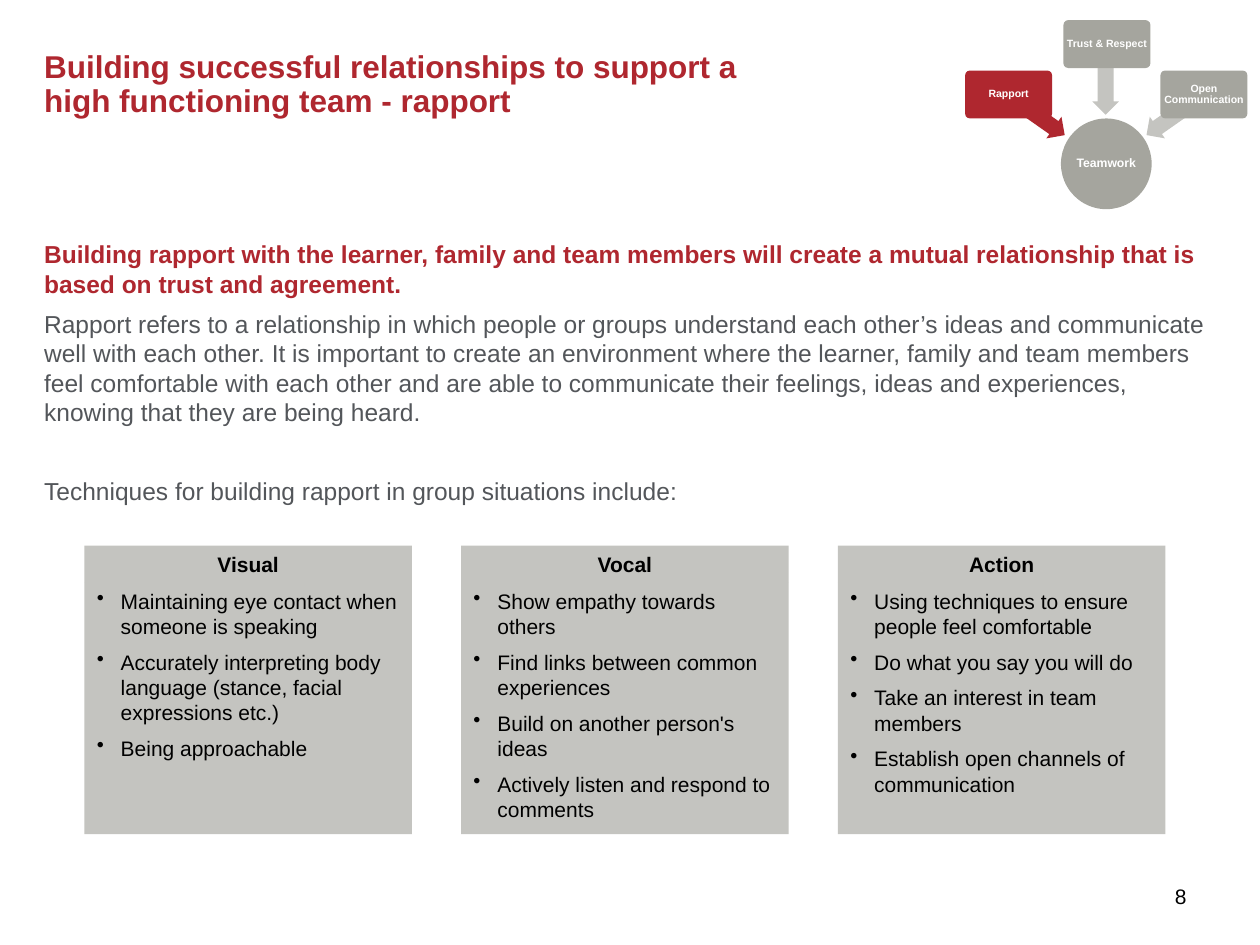
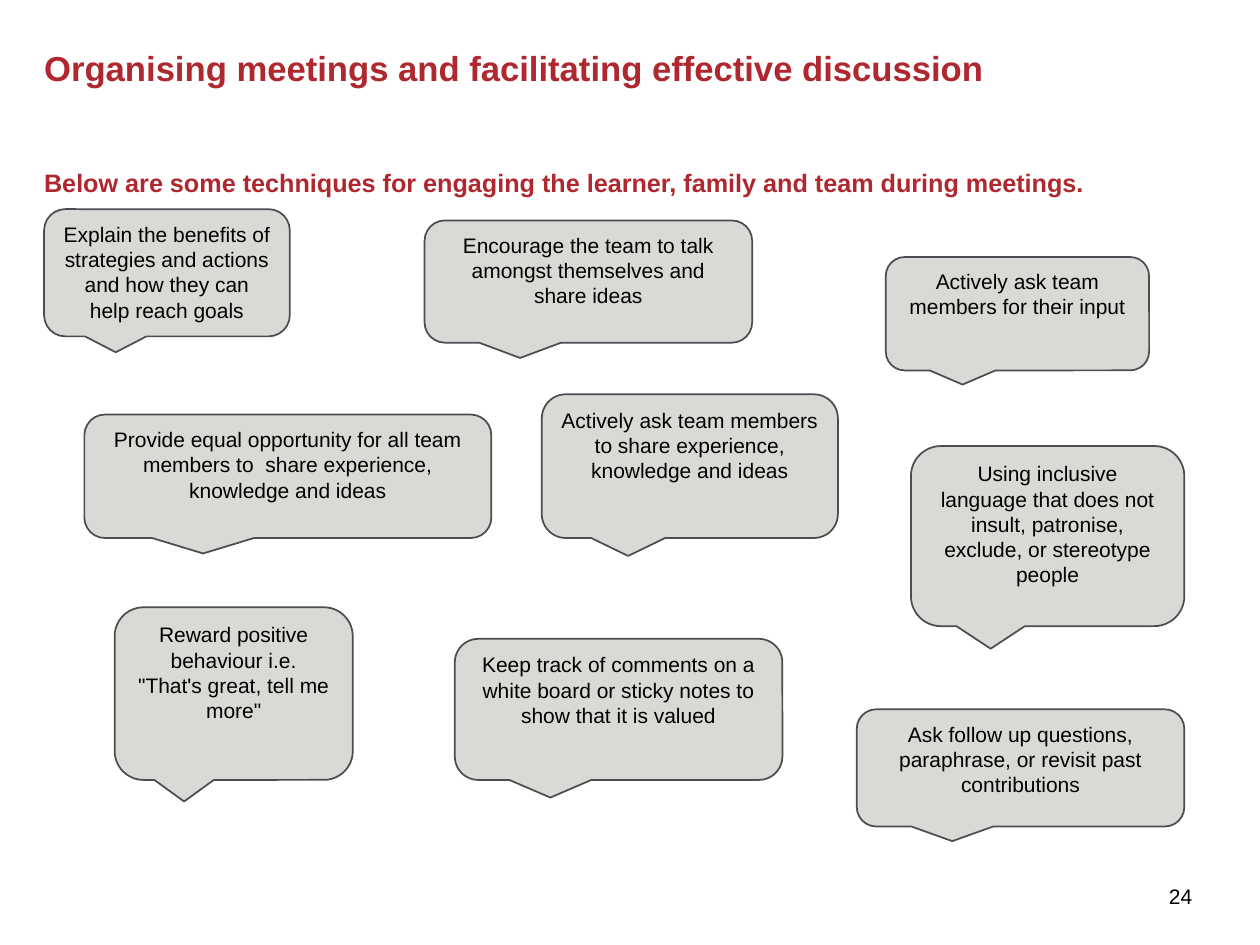
from dataclasses import dataclass
from lxml import etree
from pptx import Presentation
from pptx.dml.color import RGBColor
from pptx.enum.shapes import MSO_SHAPE as SHAPE
from pptx.enum.text import MSO_ANCHOR as ANCHOR, MSO_AUTO_SIZE as FIT, PP_ALIGN as ALIGN
from pptx.oxml.ns import qn
from pptx.util import Inches, Pt


@dataclass(frozen=True)
class Theme:
    font: str = "Arial"
    red: str = "AF272F"
    body: str = "53565A"
    black: str = "000000"
    white: str = "FFFFFF"
    panel: str = "C4C4C0"
    node: str = "A5A59E"
    bubble: str = "D9D9D6"
    outline: str = "4B4D51"
    title_size: float = 18
    wide_title_size: float = 19.8
    lead_size: float = 14
    wide_lead_size: float = 14.4
    text_size: float = 12
    hub_size: float = 7
    node_size: float = 6


T = Theme()


def write(s, paras, size, color, bold=False, align=ALIGN.CENTER, anchor=ANCHOR.TOP,
          inset=(0.1, 0.05), spacing=1.0, gap=0, bullet=False):
    """Fill a shape with paragraphs in one format; gap applies before and after each."""
    tf = s.text_frame
    tf.text = "\n".join(paras)
    x, y = map(Inches, inset)
    frame = {"auto_size": FIT.NONE, "word_wrap": True, "vertical_anchor": anchor,
             "margin_left": x, "margin_right": x, "margin_top": y, "margin_bottom": y}
    for name, value in frame.items():
        setattr(tf, name, value)
    for i, p in enumerate(tf.paragraphs):
        pPr = p._p.get_or_add_pPr()
        indent = Inches(0.19) if bullet else 0
        pPr.set("marL", str(indent))
        pPr.set("indent", str(-indent))
        if bullet:
            etree.SubElement(pPr, qn("a:buChar")).set("char", "•")
        else:
            etree.SubElement(pPr, qn("a:buNone"))
        layout = {"alignment": align, "line_spacing": spacing,
                  "space_before": Pt(gap if i else 0), "space_after": Pt(gap)}
        for name, value in layout.items():
            setattr(p, name, value)
        for r in p.runs:
            for name, value in {"name": T.font, "size": Pt(size), "bold": bold}.items():
                setattr(r.font, name, value)
            r.font.color.rgb = RGBColor.from_string(color)
    return tf


def add_shape(slide, kind, box, fill, line=None):
    s = slide.shapes.add_shape(kind, *map(Inches, box))
    s.shadow.inherit = False
    s.fill.solid()
    s.fill.fore_color.rgb = RGBColor.from_string(fill)
    if line:
        s.line.color.rgb = RGBColor.from_string(line)
        s.line.width = Pt(1)
    else:
        s.line.fill.background()
    return s


prs = Presentation()
prs.slide_width, prs.slide_height = Inches(10), Inches(7.5)

# Title, lead text and page number on both slides
pages = [
    ("Building successful relationships to support a\vhigh functioning team - rapport",
     T.title_size, 1.9, 2.3, T.lead_size,
     ["Building rapport with the learner, family and team members will create a mutual "
      "relationship that is based on trust and agreement.",
      "Rapport refers to a relationship in which people or groups understand each other’s "
      "ideas and communicate well with each other. It is important to create an environment "
      "where the learner, family and team members feel comfortable with each other and are "
      "able to communicate their feelings, ideas and experiences, knowing that they are "
      "being heard.",
      "Techniques for building rapport in group situations include:"], 8),
    ("Organising meetings and facilitating effective discussion",
     T.wide_title_size, 1.33, 0.3, T.wide_lead_size,
     ["Below are some techniques for engaging the learner, family and team during meetings."],
     24),
]
slides = []
for title, title_size, top, height, size, paras, number in pages:
    slide = prs.slides.add_slide(prs.slide_layouts[1])
    heading, lead = slide.shapes.title, slide.placeholders[1]
    for s, box in ((heading, (0.35, 0.41, 9.25, 0.68)), (lead, (0.35, top, 9.25, height))):
        s.left, s.top, s.width, s.height = map(Inches, box)
    write(heading, [title], title_size, T.red, True, ALIGN.LEFT, inset=(0, 0), spacing=0.9)
    tf = write(lead, paras, size, T.body, align=ALIGN.LEFT, inset=(0, 0), gap=3)
    font = tf.paragraphs[0].runs[0].font
    font.bold = True
    font.color.rgb = RGBColor.from_string(T.red)
    page = slide.shapes.add_textbox(*map(Inches, (9.13, 6.91, 0.48, 0.4)))
    write(page, [str(number)], T.text_size, T.black, anchor=ANCHOR.MIDDLE)
    slides.append(slide)
rapport, meetings = slides

# Rapport: technique panels
rapport.placeholders[1].text_frame.paragraphs[2].space_before = Pt(25.5)
techniques = {
    "Visual": ["Maintaining eye contact when someone is speaking",
               "Accurately interpreting body language (stance, facial expressions etc.)",
               "Being approachable"],
    "Vocal": ["Show empathy towards others",
              "Find links between common experiences",
              "Build on another person's ideas",
              "Actively listen and respond to comments"],
    "Action": ["Using techniques to ensure people feel comfortable",
               "Do what you say you will do",
               "Take an interest in team members",
               "Establish open channels of communication"],
}
for i, (name, points) in enumerate(techniques.items()):
    left = 0.67 + i * 2.99
    panel = add_shape(rapport, SHAPE.RECTANGLE, (left, 4.62, 2.6, 2), T.panel)
    write(panel, points, T.text_size, T.black, align=ALIGN.LEFT, gap=3, bullet=True)
    header = add_shape(rapport, SHAPE.RECTANGLE, (left, 4.33, 2.6, 0.29), T.panel)
    write(header, [name], T.text_size, T.black, True, anchor=ANCHOR.MIDDLE)

# Rapport: teamwork diagram
node_format = {"color": T.white, "bold": True, "anchor": ANCHOR.MIDDLE,
               "inset": (0, 0), "spacing": 0.9}
hub = add_shape(rapport, SHAPE.OVAL, (8.42, 0.94, 0.72, 0.72), T.node)
write(hub, ["Teamwork"], T.hub_size, **node_format)
factors = [
    ("Rapport", 7.66, 0.56, T.red, 7.95, 0.81, 215, T.red),
    ("Trust & Respect", 8.44, 0.16, T.node, 8.5, 0.53, 270, T.panel),
    ("Open Communication", 9.21, 0.56, T.node, 9.05, 0.81, 325, T.panel),
]
for name, x, y, fill, arrow_x, arrow_y, angle, arrow_fill in factors:
    arrow = add_shape(rapport, SHAPE.LEFT_ARROW, (arrow_x, arrow_y, 0.55, 0.21), arrow_fill)
    arrow.rotation = angle
    arrow.adjustments[0] = 0.6
    card = add_shape(rapport, SHAPE.ROUNDED_RECTANGLE, (x, y, 0.69, 0.38), fill)
    card.adjustments[0] = 0.1
    write(card, [name], T.node_size, **node_format)

# Meetings: speech bubbles
bubbles = [
    ((0.35, 1.66, 1.95, 1.01),
     ["Explain the benefits of strategies and actions and how they can help reach goals"]),
    ((3.37, 1.75, 2.6, 0.97),
     ["Encourage the team to talk amongst themselves and share ideas"]),
    ((7.03, 2.04, 2.09, 0.9), ["Actively ask team members for their input"]),
    ((7.23, 3.54, 2.17, 1.43),
     ["Using inclusive language that does not insult, patronise, exclude, or stereotype "
      "people"]),
    ((4.3, 3.13, 2.35, 1.14),
     ["Actively ask team members to share experience, knowledge and ideas"]),
    ((0.67, 3.29, 3.23, 0.98),
     ["Provide equal opportunity for all team members to  share experience, knowledge "
      "and ideas"]),
    ((0.91, 4.82, 1.89, 1.37),
     ["Reward positive behaviour i.e.", "\"That's great, tell me more\""]),
    ((3.61, 5.07, 2.6, 1.12),
     ["Keep track of comments on a white board or sticky notes to show that it is valued"]),
    ((6.8, 5.63, 2.6, 0.93),
     ["Ask follow up questions, paraphrase, or revisit past contributions"]),
]
for box, paras in bubbles:
    bubble = add_shape(meetings, SHAPE.ROUNDED_RECTANGULAR_CALLOUT, box, T.bubble, T.outline)
    write(bubble, paras, T.text_size, T.black)

prs.save("out.pptx")
